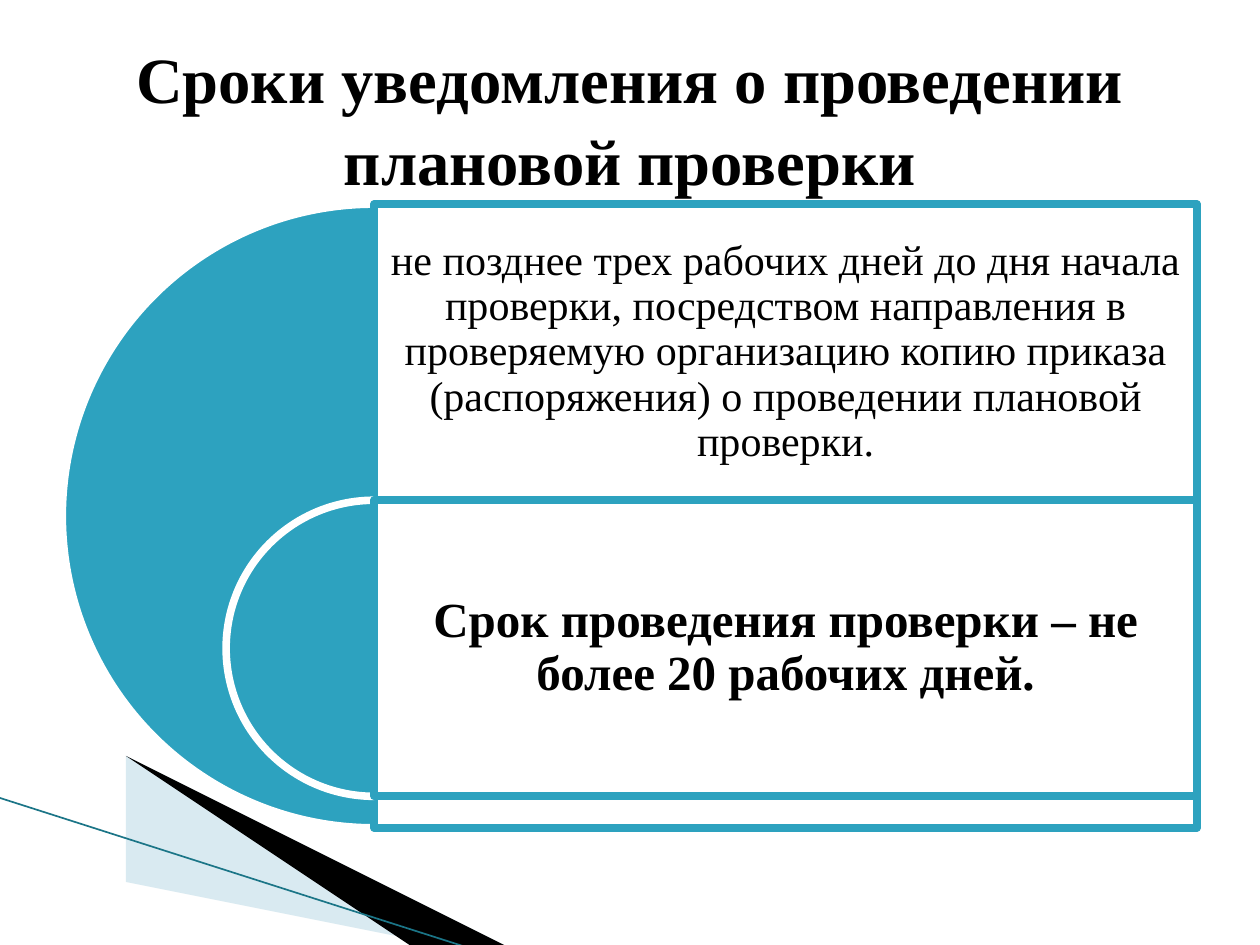
from lxml import etree
from pptx import Presentation
from pptx.dml.color import RGBColor
from pptx.enum.shapes import MSO_CONNECTOR, MSO_SHAPE
from pptx.enum.text import MSO_ANCHOR, MSO_AUTO_SIZE, PP_ALIGN
from pptx.oxml.ns import qn
from pptx.util import Inches, Pt

PIE = MSO_SHAPE.PIE
RECTANGLE = MSO_SHAPE.RECTANGLE
STRAIGHT = MSO_CONNECTOR.STRAIGHT
CENTER = PP_ALIGN.CENTER
MIDDLE = MSO_ANCHOR.MIDDLE
NO_AUTOFIT = MSO_AUTO_SIZE.NONE

TEAL = RGBColor(0x2D, 0xA2, 0xBF)
DARK_TEAL = RGBColor(0x1B, 0x75, 0x87)
PALE_BLUE = RGBColor(0xA0, 0xCB, 0xDC)
WHITE = RGBColor(0xFF, 0xFF, 0xFF)
BLACK = RGBColor(0x00, 0x00, 0x00)

FONT = "Times New Roman"
TITLE = "Сроки уведомления о проведении плановой проверки"
PANEL_LEFT = 2.97
PANEL_WIDTH = 6.53
TEXT_HEIGHT = 2.35
PANELS = [
    (1.62, 4.95,
     "не позднее трех рабочих дней до дня начала проверки, посредством "
     "направления в проверяемую организацию копию приказа (распоряжения) "
     "о проведении плановой проверки.",
     {"size": 24, "inset": 0.1}),
    (3.97, 2.35, "Срок проведения проверки – не более 20 рабочих дней.",
     {"size": 28, "inset": 0.12, "bold": True}),
]


def paint(shape, fill, line=None, opacity=100):
    shape.shadow.inherit = False
    shape.fill.solid()
    shape.fill.fore_color.rgb = fill
    if opacity < 100:
        color = shape.fill._xPr.find(qn("a:solidFill"))[0]
        etree.SubElement(color, qn("a:alpha"), val=str(opacity * 1000))
    if line is None:
        shape.line.fill.background()
    else:
        shape.line.color.rgb = line
        shape.line.width = Pt(4.33)


def write_text(shape, text, size, inset, bold=False, spacing=0.9):
    frame = shape.text_frame
    frame.word_wrap = True
    frame.auto_size = NO_AUTOFIT
    frame.vertical_anchor = MIDDLE
    frame.margin_left = frame.margin_right = Inches(inset)
    frame.margin_top = frame.margin_bottom = Inches(inset)
    paragraph = frame.paragraphs[0]
    paragraph.alignment = CENTER
    paragraph.line_spacing = spacing
    run = paragraph.add_run()
    run.text = text
    run.font.name = FONT
    run.font.size = Pt(size)
    run.font.bold = bold
    run.font.color.rgb = BLACK


def add_wedge(slide, points, fill, opacity=100):
    builder = slide.shapes.build_freeform(*points[0], scale=Inches(1))
    builder.add_line_segments(points[1:], close=True)
    paint(builder.convert_to_shape(), fill, opacity=opacity)


def add_corner_line(slide):
    line = slide.shapes.add_connector(
        STRAIGHT, Inches(-0.01), Inches(6.33), Inches(3.71), Inches(7.52))
    line.line.color.rgb = DARK_TEAL
    line.line.width = Pt(0.95)
    etree.SubElement(line._element.spPr, qn("a:effectLst"))


def add_panel(slide, top, height, text, text_format):
    pie = slide.shapes.add_shape(
        PIE, Inches(PANEL_LEFT - height / 2), Inches(top),
        Inches(height), Inches(height))
    pie.adjustments[0] = 54
    pie.adjustments[1] = 162
    paint(pie, TEAL, WHITE)
    box = (Inches(PANEL_LEFT), Inches(top), Inches(PANEL_WIDTH))
    rectangle = slide.shapes.add_shape(RECTANGLE, *box, Inches(height))
    paint(rectangle, WHITE, TEAL, opacity=90)
    text_box = slide.shapes.add_textbox(*box, Inches(TEXT_HEIGHT))
    write_text(text_box, text, **text_format)


def add_title(slide):
    title = slide.shapes.title
    title.left, title.top = Inches(0.5), Inches(0.3)
    title.width, title.height = Inches(9), Inches(1.25)
    write_text(title, TITLE, size=36.9, inset=0.05, bold=True, spacing=1.06)


def main():
    presentation = Presentation()
    presentation.slide_width = Inches(10)
    presentation.slide_height = Inches(7.5)
    slide = presentation.slides.add_slide(presentation.slide_layouts[5])
    add_wedge(slide, [(0.55, 6.51), (5.95, 7.51), (4.56, 7.51), (0.55, 6.5)],
              PALE_BLUE, opacity=40)
    add_wedge(slide, [(0.53, 6.49), (4.57, 7.51), (3.72, 7.52), (0.54, 6.5)],
              BLACK)
    add_corner_line(slide)
    for panel in PANELS:
        add_panel(slide, *panel)
    add_title(slide)
    presentation.save("out.pptx")


if __name__ == "__main__":
    main()
